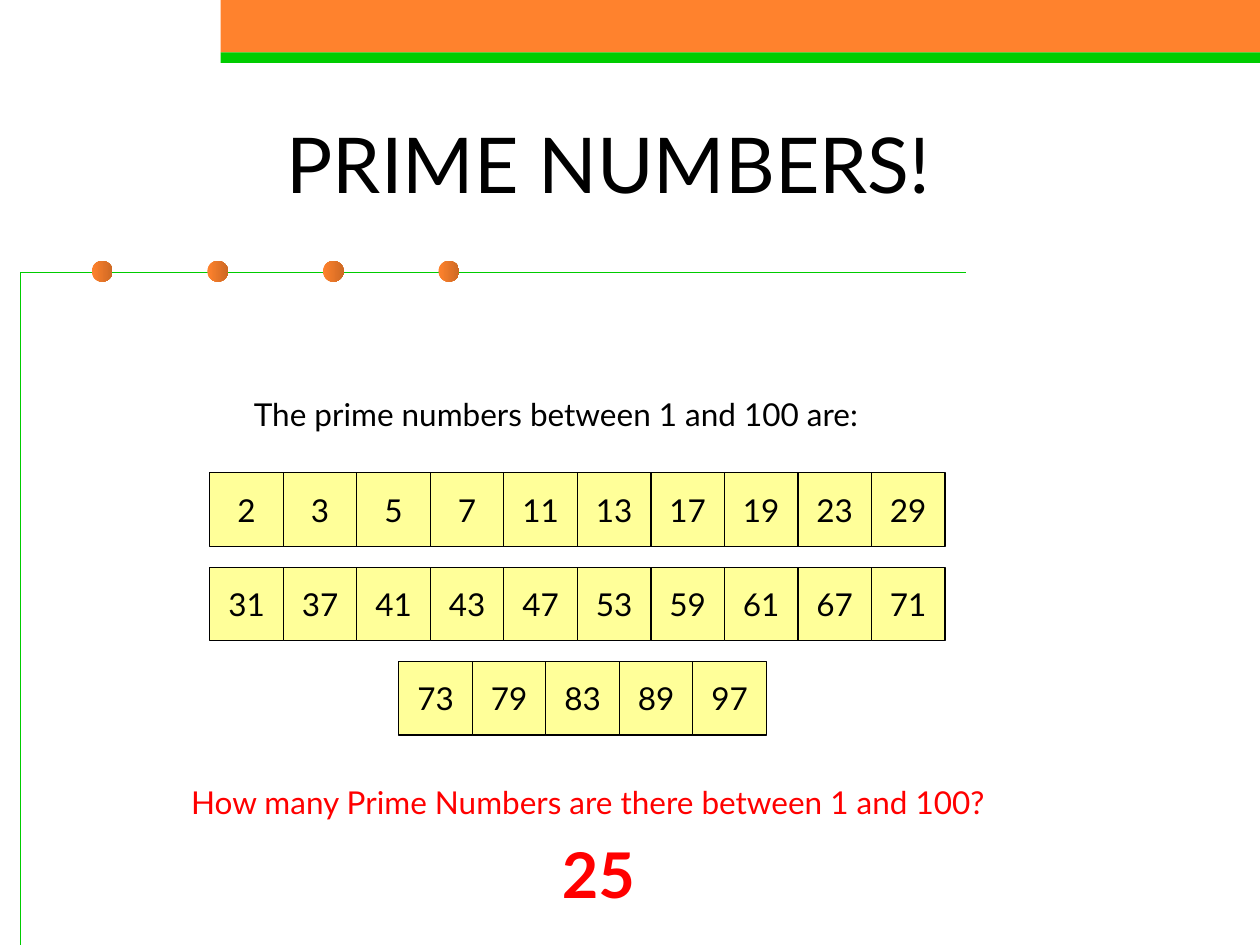
"""Build the prime numbers slide."""
import dataclasses

import pptx
import pptx.dml.color
import pptx.enum.shapes
import pptx.enum.text
import pptx.util

Cm = pptx.util.Cm
Pt = pptx.util.Pt
Color = pptx.dml.color.RGBColor.from_string
Shape = pptx.enum.shapes.MSO_SHAPE
Align = pptx.enum.text.PP_ALIGN
Anchor = pptx.enum.text.MSO_ANCHOR


@dataclasses.dataclass(frozen=True)
class Theme:
    """Colours, font and sizes of the slide."""
    orange: str = "FF822D"
    dark_orange: str = "CD6924"
    green: str = "00CC00"
    yellow: str = "FFFF99"
    black: str = "000000"
    red: str = "FF0000"
    font: str = "Lato"
    title_size: int = 44
    body_size: int = 18
    answer_size: int = 36
    line_width: float = 0.75


@dataclasses.dataclass(frozen=True)
class Box:
    """A region in centimetres."""
    left: float
    top: float
    width: float
    height: float

    def lengths(self):
        """Return the four values as slide lengths."""
        return [Cm(value) for value in dataclasses.astuple(self)]


THEME = Theme()
PRIME_ROWS = [
    (0, [2, 3, 5, 7, 11, 13, 17, 19, 23, 29]),
    (0, [31, 37, 41, 43, 47, 53, 59, 61, 67, 71]),
    (3.81, [73, 79, 83, 89, 97]),
]


def apply_format(target, values):
    """Set each attribute named in values on the target."""
    for name, value in values.items():
        setattr(target, name, value)


def write_text(shape, text, size, color=THEME.black, align=Align.CENTER, bold=False, **frame_format):
    """Write one formatted paragraph into a shape."""
    apply_format(shape.text_frame, {"word_wrap": True, **frame_format})
    paragraph = shape.text_frame.paragraphs[0]
    paragraph.alignment = align
    run = paragraph.add_run()
    run.text = text
    apply_format(run.font, {"name": THEME.font, "size": Pt(size), "bold": bold})
    run.font.color.rgb = Color(color)


def add_text(slide, box, text, size, **text_format):
    """Add a text box that fills the given box."""
    write_text(slide.shapes.add_textbox(*box.lengths()), text, size, **text_format)


def style_line(shape):
    """Remove the shadow of a shape and give its line the theme width."""
    shape.shadow.inherit = False
    shape.line.width = Pt(THEME.line_width)


def add_filled_shape(slide, kind, box, fill):
    """Add a shape with a plain fill and no outline."""
    shape = slide.shapes.add_shape(kind, *box.lengths())
    shape.shadow.inherit = False
    shape.fill.solid()
    shape.fill.fore_color.rgb = Color(fill)
    shape.line.fill.background()
    return shape


def add_banner(slide, box):
    """Add the orange band with a green strip along its lower edge."""
    strip = box.height / 6
    band = box.height - strip
    add_filled_shape(slide, Shape.RECTANGLE, Box(box.left, box.top, box.width, band), THEME.orange)
    add_filled_shape(slide, Shape.RECTANGLE, Box(box.left, box.top + band, box.width, strip), THEME.green)


def add_frame(slide, box, dot_count=4, dot_size=0.42, dot_offset=1.43, dot_pitch=2.33):
    """Add the corner line and the row of dots on its upper edge."""
    left, top, width, height = box.lengths()
    builder = slide.shapes.build_freeform(left, top + height)
    builder.add_line_segments([(left, top), (left + width, top)], close=False)
    corner = builder.convert_to_shape()
    corner.fill.background()
    style_line(corner)
    corner.line.color.rgb = Color(THEME.green)
    for index in range(dot_count):
        dot_left = box.left + dot_offset + index * dot_pitch
        dot_box = Box(dot_left, box.top - 0.24, dot_size, dot_size)
        dot = add_filled_shape(slide, Shape.OVAL, dot_box, THEME.orange)
        dot.fill.gradient()
        dot.fill.gradient_angle = 0
        for position, (stop, color) in enumerate(zip(dot.fill.gradient_stops, (THEME.orange, THEME.dark_orange))):
            stop.position = position
            stop.color.rgb = Color(color)


def add_prime_grid(slide, box, columns=10):
    """Add the rows of numbered squares."""
    side = box.width / columns
    pitch = (box.height - side) / (len(PRIME_ROWS) - 1)
    for row, (indent, primes) in enumerate(PRIME_ROWS):
        for column, prime in enumerate(primes):
            cell_box = Box(box.left + indent + column * side, box.top + row * pitch, side, side)
            cell = add_filled_shape(slide, Shape.RECTANGLE, cell_box, THEME.yellow)
            cell.line.color.rgb = Color(THEME.black)
            style_line(cell)
            write_text(cell, str(prime), THEME.body_size, word_wrap=False, vertical_anchor=Anchor.MIDDLE)


def add_question(slide, box):
    """Add the red question with its answer below."""
    add_text(slide, Box(box.left, box.top, box.width, 1.02),
             "How many Prime Numbers are there between 1 and 100?", THEME.body_size, color=THEME.red)
    add_text(slide, Box(box.left + 0.21, box.top + 1.06, box.width, 1.78),
             "25", THEME.answer_size, color=THEME.red, bold=True)


def main():
    """Build and save the presentation."""
    presentation = pptx.Presentation()
    apply_format(presentation, {"slide_width": Cm(25.4), "slide_height": Cm(19.05)})
    slide = presentation.slides.add_slide(presentation.slide_layouts[6])
    add_banner(slide, Box(4.45, 0, 20.95, 1.27))
    add_frame(slide, Box(0.42, 5.5, 19.05, 13.55))
    add_text(slide, Box(1.48, 1.69, 21.59, 3.18), "PRIME NUMBERS!", THEME.title_size,
             vertical_anchor=Anchor.MIDDLE)
    add_text(slide, Box(4.87, 7.83, 14.82, 1.02), "The prime numbers between 1 and 100 are:",
             THEME.body_size, align=Align.LEFT)
    add_prime_grid(slide, Box(4.23, 9.53, 14.82, 5.29))
    add_question(slide, Box(2.54, 15.66, 18.63, 2.84))
    presentation.save("out.pptx")


if __name__ == "__main__":
    main()
